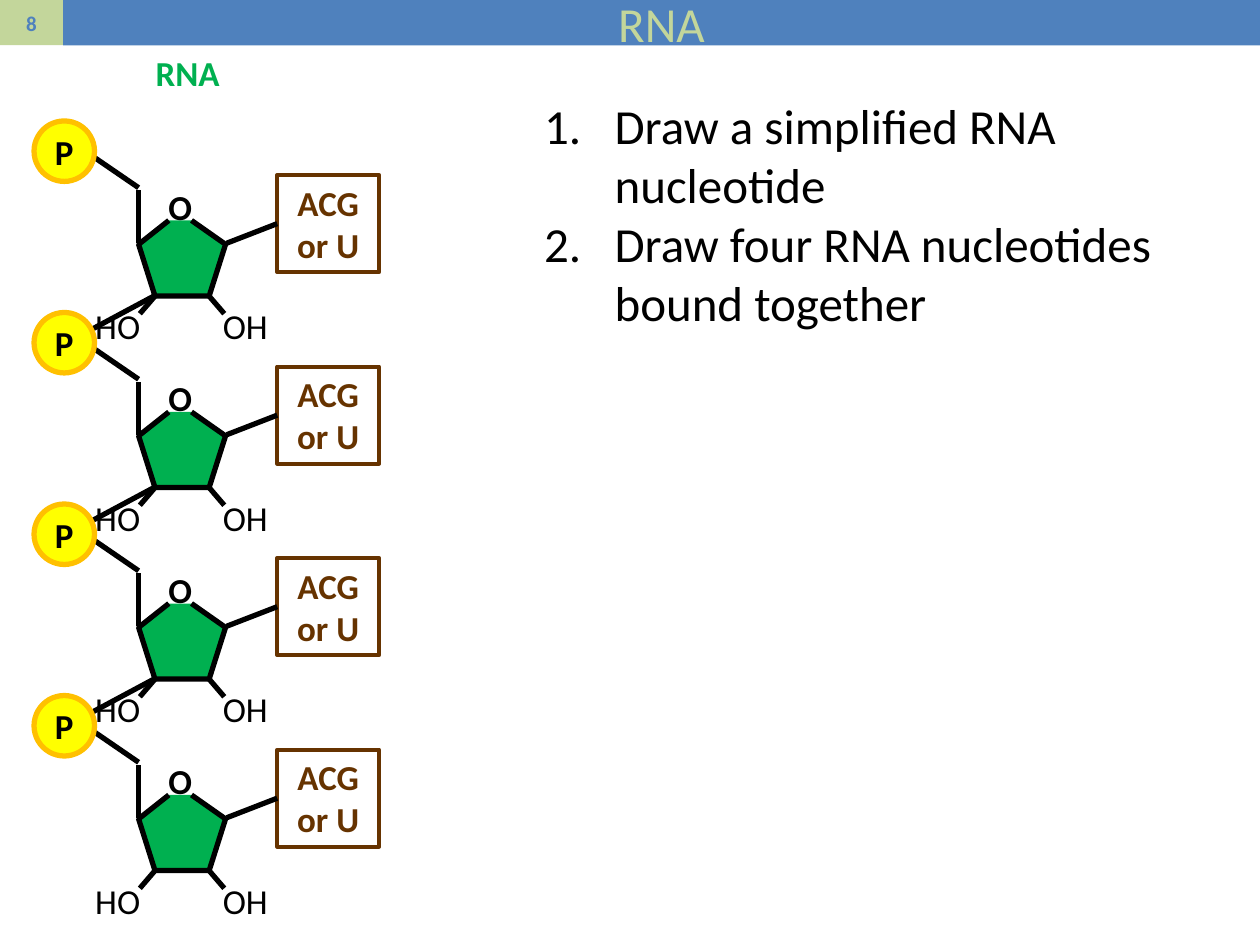
"""Build a slide of four RNA nucleotides bound in a chain, on a grid of 100 by 75 cells."""
from typing import NamedTuple

from lxml.etree import SubElement as Sub
from pptx import Presentation
from pptx.dml.color import RGBColor
from pptx.enum.shapes import MSO_CONNECTOR as Link, MSO_SHAPE as Kind
from pptx.enum.text import MSO_ANCHOR as Anchor, MSO_AUTO_SIZE as Fit, PP_ALIGN as Align
from pptx.oxml.ns import qn
from pptx.util import Inches, Pt

WIDE, HIGH = Inches(10), Inches(7.5)
COLS, ROWS = 100, 75
BLACK, WHITE, GREEN, BROWN = "000000", "FFFFFF", "00B050", "663300"
BLUE, LIME, YELLOW, GOLD = "4F81BD", "C3D69B", "FFFF00", "FFC000"
FIRST, PITCH, COUNT = 17.5, 15.2, 4


class Area(NamedTuple):
    """Left, top, width and height in grid cells."""
    left: float
    top: float
    wide: float
    high: float

    def down(self, rows: float) -> "Area":
        """Return the area moved down by some rows."""
        return self._replace(top=self.top + rows)


class Bond(NamedTuple):
    """Start and end of a bond in grid cells."""
    x1: float
    y1: float
    x2: float
    y2: float


class Label(NamedTuple):
    """Text with its area and format."""
    text: str
    area: Area
    form: dict
    align: Align = Align.CENTER


PLAIN = {"size": Pt(20), "bold": False, "color": BLACK}
BOLD = PLAIN | {"bold": True}
LARGE = PLAIN | {"size": Pt(28)}
RING = [(15.2, 0), (17.9, 1.9), (16.6, 6), (12.3, 6), (11, 1.9), (13.4, 0)]
STEM, ARM = Bond(11, 1.8, 11, -2.4), Bond(11, -2.6, 7.5, -5)
LEFT, RIGHT = Bond(12.3, 6, 11.1, 7.4), Bond(16.6, 6, 17.8, 7.4)
CHAIN, BASE = Bond(6.8, 8.9, 12.4, 5.9), Bond(22, 0.4, 18, 1.8)
HO = Label("HO", Area(6.2, 6.2, 6.3, 4.4), PLAIN)
OH = Label("OH", Area(16.7, 6.2, 6.3, 4.4), PLAIN, Align.LEFT)
OXY = Label("O", Area(12.1, -3.3, 4.4, 4.4), BOLD)
PHOS = Label("P", Area(2.7, -7.9, 4.8, 4.8), BOLD)
BOX = Label("ACG\vor U", Area(22, -3.6, 8.1, 7.7), BOLD | {"color": BROWN})
HEAD = Label("RNA", Area(2.7, 3.6, 24.4, 4.4), BOLD | {"color": GREEN})
TITLE = Label("RNA", Area(5, 0, 95, 3.6), LARGE | {"color": LIME})
PAGE = Label("8", Area(0, 0, 5, 3.6), BOLD | {"size": Pt(12), "color": BLUE})
TASKS = Area(42.2, 7.1, 51.8, 19.9)
STEPS = ["Draw a simplified RNA nucleotide", "Draw four RNA nucleotides bound together"]


def col(n: float) -> int:
    """Turn columns into a length."""
    return round(WIDE * n / COLS)


def row(n: float) -> int:
    """Turn rows into a length."""
    return round(HIGH * n / ROWS)


def place(area: Area) -> tuple:
    """Turn an area into four lengths."""
    return col(area.left), row(area.top), col(area.wide), row(area.high)


def paint(part, hue: str) -> None:
    """Fill a shape, line or font with one colour."""
    part.fill.solid()
    part.fill.fore_color.rgb = RGBColor.from_string(hue)


def write(para, text: str, form: dict, align: Align) -> None:
    """Put formatted text in a paragraph."""
    para.text, para.alignment = text, align
    for run in para.runs:
        for key, val in ({"name": "Calibri"} | form).items():
            if key == "color":
                paint(run.font, val)
            else:
                setattr(run.font, key, val)


def note(slide, label: Label, drop: float = 0) -> None:
    """Add a text box that grows with its text."""
    frame = slide.shapes.add_textbox(*place(label.area.down(drop))).text_frame
    frame.word_wrap, frame.auto_size = True, Fit.SHAPE_TO_FIT_TEXT
    write(frame.paragraphs[0], label.text, label.form, label.align)


def edge(shape, hue: str, size: float) -> None:
    """Give a shape an outline and no shadow."""
    shape.shadow.inherit = False
    paint(shape.line, hue)
    shape.line.width = Pt(size)


def block(slide, kind: Kind, label: Label, fill: str, line: str = "", size: float = 0,
          drop: float = 0, look: dict | None = None):
    """Add a filled shape with text."""
    shape = slide.shapes.add_shape(kind, *place(label.area.down(drop)))
    paint(shape, fill)
    if line:
        edge(shape, line, size)
    else:
        shape.shadow.inherit = False
        shape.line.fill.background()
    for key, val in (look or {}).items():
        setattr(shape.text_frame, key, val)
    write(shape.text_frame.paragraphs[0], label.text, label.form, label.align)
    return shape


def bind(slide, bond: Bond, drop: float, box=None) -> None:
    """Draw a bond, joined to the left side of a box if given."""
    line = slide.shapes.add_connector(Link.STRAIGHT, col(bond.x1), row(bond.y1 + drop),
                                      col(bond.x2), row(bond.y2 + drop))
    if box is not None:
        line.begin_connect(box, 1)
    paint(line.line, BLACK)
    line.line.width = Pt(3)
    Sub(line._element.spPr, qn("a:effectLst"))


def sugar(slide, drop: float) -> None:
    """Draw the sugar ring, open below its oxygen."""
    spots = [(col(x), row(y + drop)) for x, y in RING]
    pen = slide.shapes.build_freeform(*spots[0])
    pen.add_line_segments(spots[1:], close=False)
    ring = pen.convert_to_shape()
    paint(ring, GREEN)
    edge(ring, BLACK, 3)


def unit(slide, drop: float) -> None:
    """Draw one nucleotide."""
    sugar(slide, drop)
    note(slide, OXY, drop)
    for bond in (STEM, ARM, RIGHT):
        bind(slide, bond, drop)
    block(slide, Kind.OVAL, PHOS, YELLOW, GOLD, 3, drop,
          {"word_wrap": False, "vertical_anchor": Anchor.MIDDLE})
    box = block(slide, Kind.RECTANGLE, BOX, WHITE, BROWN, 2.25, drop,
                {"word_wrap": True, "vertical_anchor": Anchor.TOP})
    bind(slide, BASE, drop, box)
    note(slide, OH, drop)


def tasks(slide) -> None:
    """Add the numbered tasks."""
    frame = slide.shapes.add_textbox(*place(TASKS)).text_frame
    frame.word_wrap, frame.auto_size = True, Fit.SHAPE_TO_FIT_TEXT
    for i, step in enumerate(STEPS):
        para = frame.add_paragraph() if i else frame.paragraphs[0]
        write(para, step, LARGE, Align.LEFT)
        props = para._p.get_or_add_pPr()
        props.set("marL", str(col(5.6)))
        props.set("indent", str(-col(5.6)))
        Sub(props, qn("a:buFont"), typeface="+mj-lt")
        Sub(props, qn("a:buAutoNum"), type="arabicPeriod")


def banner(slide) -> None:
    """Set the title bar and the page number."""
    block(slide, Kind.RECTANGLE, PAGE, LIME, look={"vertical_anchor": Anchor.MIDDLE})
    title = slide.shapes.title
    title.left, title.top, title.width, title.height = place(TITLE.area)
    paint(title, BLUE)
    frame = title.text_frame
    frame.auto_size, frame.vertical_anchor = Fit.NONE, Anchor.MIDDLE
    write(frame.paragraphs[0], TITLE.text, TITLE.form, TITLE.align)


def main() -> None:
    """Build and save the slide."""
    deck = Presentation()
    deck.slide_width, deck.slide_height = WIDE, HIGH
    slide = deck.slides.add_slide(deck.slide_layouts[5])
    banner(slide)
    drops = [FIRST + PITCH * i for i in range(COUNT)]
    for drop in drops:
        if drop != drops[-1]:
            bind(slide, CHAIN, drop)
        note(slide, HO, drop)
        bind(slide, LEFT, drop)
    for drop in drops:
        unit(slide, drop)
    note(slide, HEAD)
    tasks(slide)
    deck.save("out.pptx")


if __name__ == "__main__":
    main()
